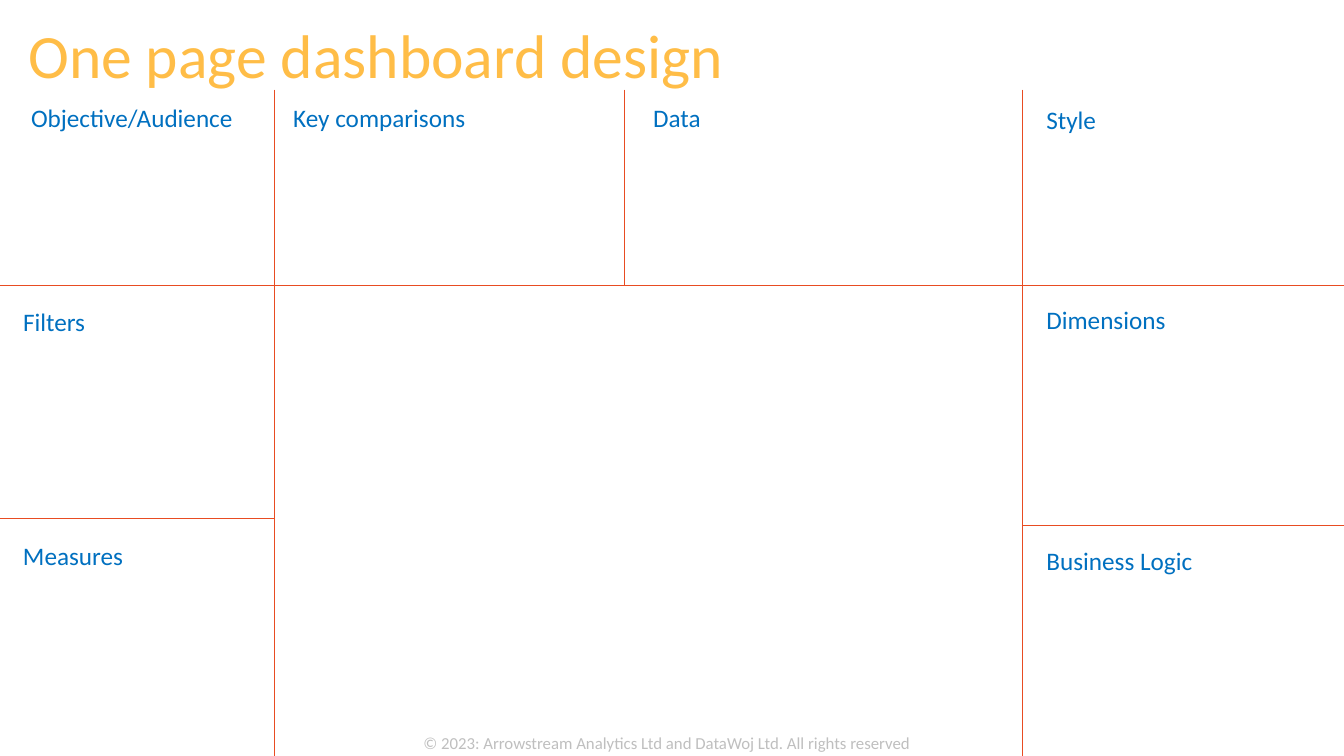
from pptx import Presentation
from pptx.dml.color import RGBColor
from pptx.enum.shapes import MSO_CONNECTOR
from pptx.enum.text import MSO_ANCHOR, MSO_AUTO_SIZE, PP_ALIGN
from pptx.oxml.ns import qn
from pptx.util import Inches, Pt
from lxml import etree

STRAIGHT = MSO_CONNECTOR.STRAIGHT
TOP = MSO_ANCHOR.TOP
GROW = MSO_AUTO_SIZE.SHAPE_TO_FIT_TEXT
LEFT = PP_ALIGN.LEFT

ORANGE = RGBColor(0xE8, 0x4C, 0x22)
BLUE = RGBColor(0x00, 0x70, 0xC0)
AMBER = RGBColor(0xFF, 0xBD, 0x47)
GREY = RGBColor(0xBF, 0xBF, 0xBF)

FONT = "Calibri"
WIDTH, HEIGHT = 13.33, 7.5
GRID_TOP, HEADER_BOTTOM = 0.89, 2.83
LEFT_EDGE, MIDDLE, RIGHT_EDGE = 2.72, 6.19, 10.14
LEFT_SPLIT, RIGHT_SPLIT = 5.14, 5.21

RULES = [
    (LEFT_EDGE, GRID_TOP, LEFT_EDGE, HEIGHT),
    (RIGHT_EDGE, GRID_TOP, RIGHT_EDGE, HEIGHT),
    (0, HEADER_BOTTOM, WIDTH, HEADER_BOTTOM),
    (0, LEFT_SPLIT, LEFT_EDGE, LEFT_SPLIT),
    (RIGHT_EDGE, RIGHT_SPLIT, WIDTH, RIGHT_SPLIT),
    (MIDDLE, GRID_TOP, MIDDLE, HEADER_BOTTOM),
]

# Panel heading, panel left and top, heading inset from each, heading width
PANELS = [
    ("Objective/Audience", 0, GRID_TOP, 0.21, 0.08, 2.23),
    ("Key comparisons", LEFT_EDGE, GRID_TOP, 0.09, 0.08, 1.93),
    ("Data", MIDDLE, GRID_TOP, 0.19, 0.08, 0.68),
    ("Style", RIGHT_EDGE, GRID_TOP, 0.14, 0.1, 0.7),
    ("Filters", 0, HEADER_BOTTOM, 0.13, 0.16, 0.82),
    ("Measures", 0, LEFT_SPLIT, 0.13, 0.17, 1.2),
    ("Dimensions", RIGHT_EDGE, HEADER_BOTTOM, 0.14, 0.14, 1.4),
    ("Business Logic", RIGHT_EDGE, RIGHT_SPLIT, 0.14, 0.15, 1.67),
]


def write(frame, text, size, color):
    """Write one left-aligned, unwrapped line into a text frame."""
    frame.word_wrap = False
    frame.auto_size = GROW
    frame.vertical_anchor = TOP
    paragraph = frame.paragraphs[0]
    paragraph.alignment = LEFT
    run = paragraph.add_run()
    run.text = text
    run.font.name = FONT
    run.font.size = Pt(size)
    run.font.color.rgb = color


def add_title(slide, left, top, width, height):
    """Place and fill the slide title."""
    title = slide.shapes.title
    title.left, title.top = Inches(left), Inches(top)
    title.width, title.height = Inches(width), Inches(height)
    write(title.text_frame, "One page dashboard design", 44, AMBER)


def add_rule(slide, x1, y1, x2, y2):
    """Draw one thin line of the dashboard grid."""
    rule = slide.shapes.add_connector(
        STRAIGHT, Inches(x1), Inches(y1), Inches(x2), Inches(y2))
    rule.line.color.rgb = ORANGE
    rule.line.width = Pt(0.5)
    etree.SubElement(rule._element.spPr, qn("a:effectLst"))


def add_line_of_text(slide, text, box, size, color):
    """Add a single line of text in the given box."""
    label = slide.shapes.add_textbox(*map(Inches, box))
    write(label.text_frame, text, size, color)


def add_panel(slide, heading, left, top, inset_x, inset_y, width):
    """Add a panel heading relative to the panel's top left corner."""
    box = (left + inset_x, top + inset_y, width, 0.4)
    add_line_of_text(slide, heading, box, 18, BLUE)


def add_footer(slide, box):
    """Add the copyright line."""
    add_line_of_text(
        slide,
        "© 2023: Arrowstream Analytics Ltd and DataWoj Ltd. All rights reserved",
        box, 12, GREY)


def main():
    """Build and save the dashboard design slide."""
    deck = Presentation()
    deck.slide_width, deck.slide_height = Inches(WIDTH), Inches(HEIGHT)
    slide = deck.slides.add_slide(deck.slide_layouts[5])
    for rule in RULES:
        add_rule(slide, *rule)
    for panel in PANELS:
        add_panel(slide, *panel)
    add_title(slide, 0.18, 0.12, 7.17, 0.84)
    add_footer(slide, (4.1, 7.22, 5.13, 0.3))
    deck.save("out.pptx")


if __name__ == "__main__":
    main()
